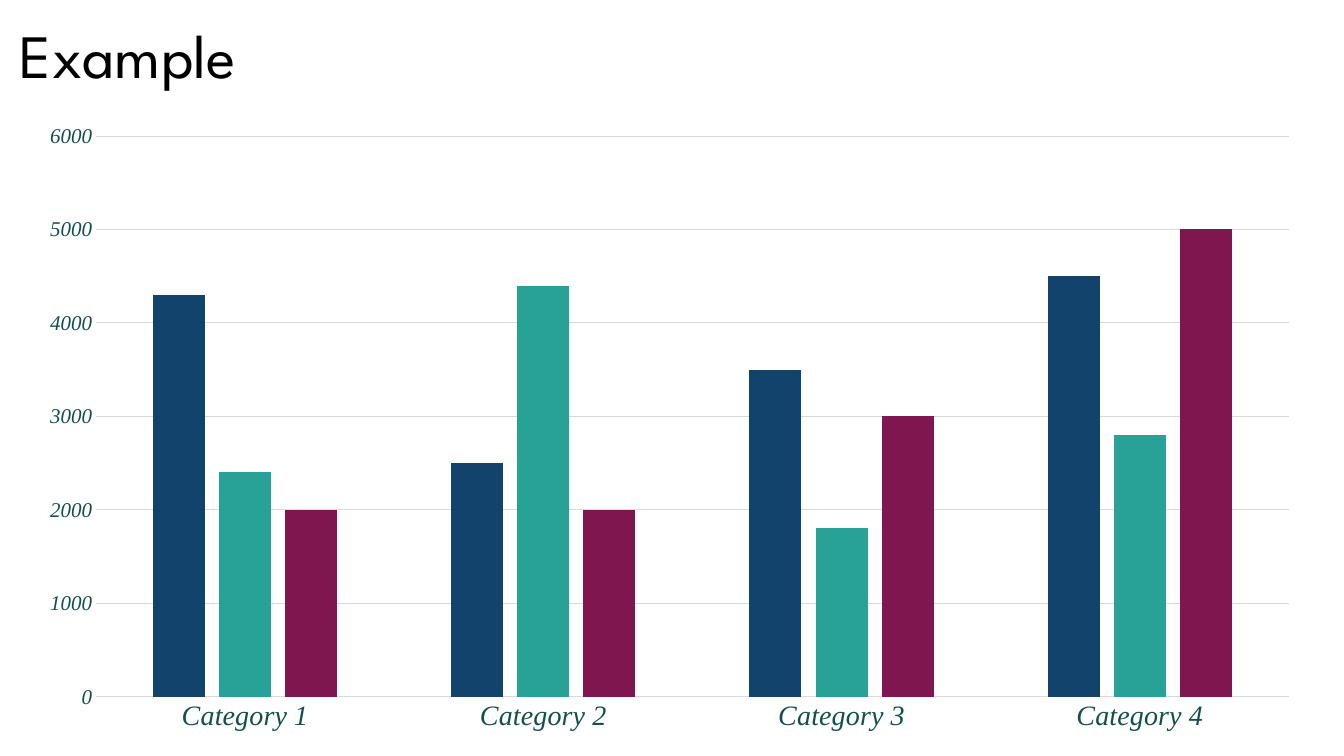
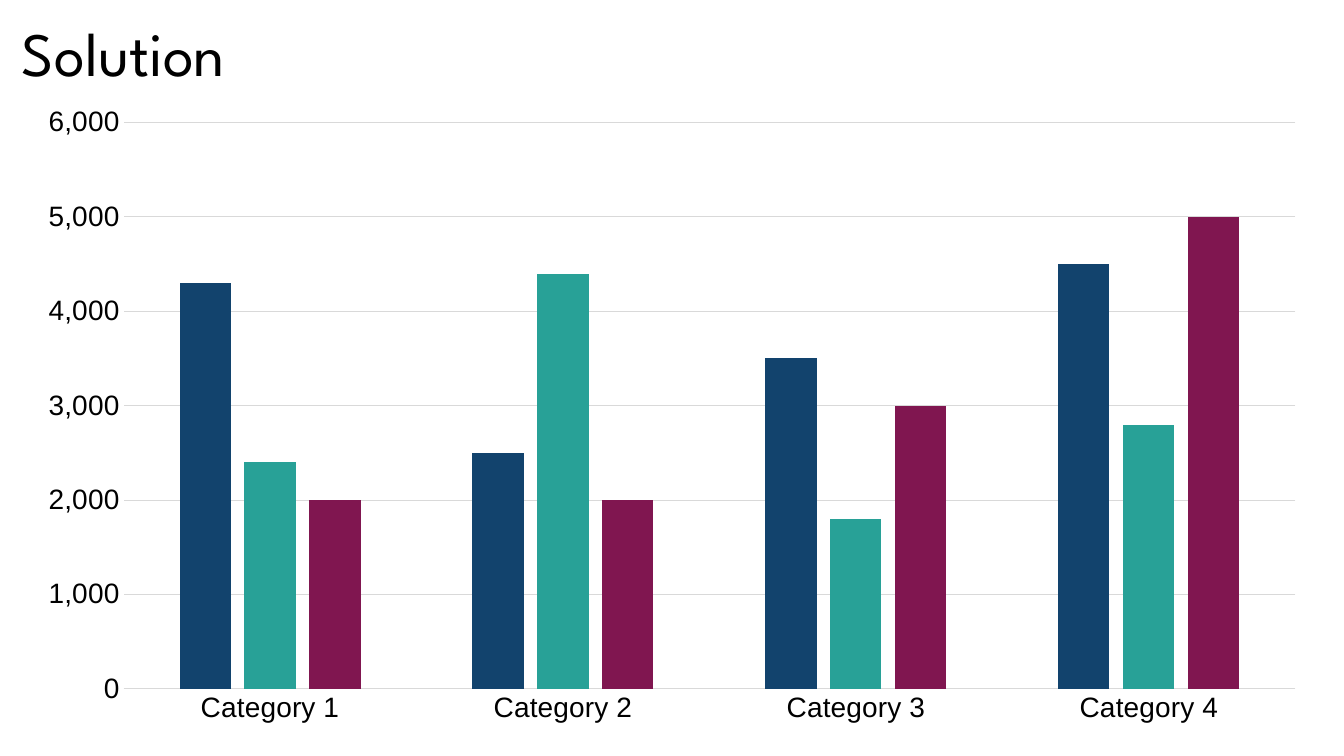
"""Build two slides that show one column chart before and after clean styling."""
from dataclasses import dataclass

from lxml.etree import SubElement
from pptx import Presentation
from pptx.chart.data import CategoryChartData
from pptx.dml.color import RGBColor
from pptx.enum.chart import XL_CHART_TYPE, XL_TICK_MARK
from pptx.enum.text import MSO_ANCHOR
from pptx.oxml.ns import qn
from pptx.util import Inches, Pt


@dataclass(frozen=True)
class Theme:
    """Colours, fonts and sizes that the slides share."""
    back: str = "FFFFFF"
    ink: str = "000000"
    green: str = "14504B"
    grid: str = "D9D9D9"
    bars: tuple = ("12436D", "28A197", "801650")
    head: str = "League Spartan"
    sans: str = "Arial"
    serif: str = "Times New Roman"
    title: int = 44
    label: int = 20
    small: int = 15
    base: int = 10
    rule: float = 0.75


T = Theme()
CATS = ["Category 1", "Category 2", "Category 3", "Category 4"]
DATA = {
    "Series 1": (4300, 2500, 3500, 4500),
    "Series 2": (2400, 4400, 1800, 2800),
    "Series 3": (2000, 2000, 3000, 5000),
}
SLIDES = [
    {"title": "Example", "spot": (0.1, -0.14, 11.5, 1.45),
     "area": (0.24, 1.11, 12.8, 6.28), "plot": None, "format": "General",
     "face": T.serif, "ink": T.green, "italic": True, "size": T.small},
    {"title": "Solution", "spot": (0.12, -0.16, 11.5, 1.45),
     "area": (0.24, 1.06, 12.8, 6.33), "plot": (0.077, 0.022, 0.908, 0.89),
     "format": "#,##0", "face": T.sans, "ink": T.ink, "italic": False,
     "size": T.label},
]


def color(code):
    return RGBColor.from_string(code)


def style(font, face, size, ink, italic=False):
    font.name, font.size = face, Pt(size)
    font.color.rgb = color(ink)
    font.bold, font.italic = False, italic


def rule(line):
    line.color.rgb = color(T.grid)
    line.width = Pt(T.rule)


def add_title(slide, item):
    box = slide.shapes.add_textbox(*map(Inches, item["spot"]))
    frame = box.text_frame
    frame.word_wrap = True
    frame.vertical_anchor = MSO_ANCHOR.MIDDLE
    para = frame.paragraphs[0]
    para.line_spacing = 0.9
    run = para.add_run()
    run.text = item["title"]
    style(run.font, T.head, T.title, T.ink)


def set_plot(chart, place):
    area = chart._chartSpace.chart.plotArea
    for old in area.findall(qn("c:layout")):
        area.remove(old)
    layout = SubElement(area, qn("c:layout"))
    area.insert(0, layout)
    manual = SubElement(layout, qn("c:manualLayout"))
    parts = [("layoutTarget", "inner"), ("xMode", "edge"), ("yMode", "edge")]
    for tag, value in parts + list(zip("xywh", place)):
        SubElement(manual, qn(f"c:{tag}")).set("val", str(value))


def add_bars(slide, item):
    data = CategoryChartData(number_format="General")
    data.categories = CATS
    for name, values in DATA.items():
        data.add_series(name, values)
    chart = slide.shapes.add_chart(
        XL_CHART_TYPE.COLUMN_CLUSTERED, *map(Inches, item["area"]), data).chart
    chart.has_title = chart.has_legend = False
    style(chart.font, T.sans, T.base, T.ink)
    plot = chart.plots[0]
    plot.vary_by_categories = False
    plot.gap_width, plot.overlap = 219, -27
    for series, fill in zip(plot.series, T.bars):
        series.format.fill.solid()
        series.format.fill.fore_color.rgb = color(fill)
        series.invert_if_negative = False

    cats, vals = chart.category_axis, chart.value_axis
    for axis, size in ((cats, T.label), (vals, item["size"])):
        axis.major_tick_mark = axis.minor_tick_mark = XL_TICK_MARK.NONE
        style(axis.tick_labels.font, item["face"], size, item["ink"],
              item["italic"])
    rule(cats.format.line)
    vals.format.line.fill.background()
    vals.has_major_gridlines = True
    rule(vals.major_gridlines.format.line)
    vals.minimum_scale, vals.maximum_scale, vals.major_unit = 0, 6000, 1000
    vals.tick_labels.number_format = item["format"]
    vals.tick_labels.number_format_is_linked = False
    if item["plot"]:
        set_plot(chart, item["plot"])


def main():
    deck = Presentation()
    deck.slide_width, deck.slide_height = Inches(13.33), Inches(7.5)
    fill = deck.slide_master.background.fill
    fill.solid()
    fill.fore_color.rgb = color(T.back)
    for item in SLIDES:
        slide = deck.slides.add_slide(deck.slide_layouts[6])
        add_bars(slide, item)
        add_title(slide, item)
    deck.save("out.pptx")


if __name__ == "__main__":
    main()
